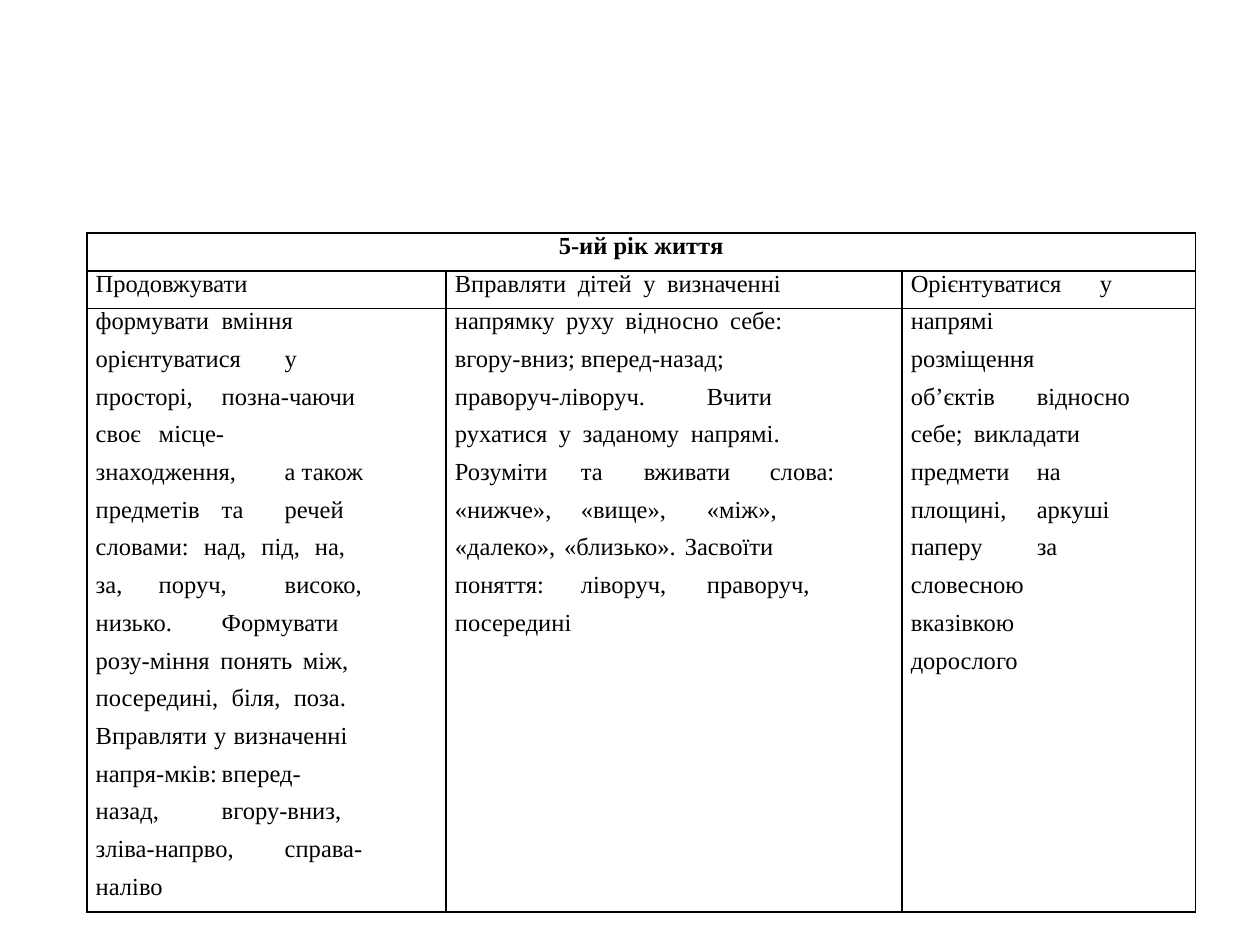
from dataclasses import dataclass
from lxml.etree import SubElement
from pptx import Presentation
from pptx.dml.color import RGBColor
from pptx.enum.text import PP_ALIGN
from pptx.oxml.ns import qn
from pptx.util import Cm, Pt


@dataclass
class Theme:
    ink: str = "000000"
    face: str = "Times New Roman"
    size: float = 14
    lead: float = 15.1
    rule: float = 1


theme = Theme()
title = "5-ий рік життя"
widths = [7.24, 9.19, 5.92]
count = 18
height = 0.76

# text, tab stops in cm, extra points in each word gap
goals = [
    ("Продовжувати", [], 0),
    ("формувати\tвміння", [3.86], 0),
    ("орієнтуватися\tу", [5.05], 0),
    ("просторі,\tпозна-чаючи", [2.59], 0),
    ("своє\tмісце-", [3.99], 0),
    ("знаходження,\tа також", [3.56], 0),
    ("предметів\tта\tречей", [2.97, 4.09], 0),
    ("словами: над, під, на,", [], 5),
    ("за,\tпоруч,\tвисоко,", [1.55, 3.73], 0),
    ("низько.\tФормувати", [2.92], 0),
    ("розу-міння понять між,", [], 2.5),
    ("посередині, біля, поза.", [], 4),
    ("Вправляти у визначенні", [], 0.5),
    ("напря-мків:\tвперед-", [3.71], 0),
    ("назад,\tвгору-вниз,", [2.87], 0),
    ("зліва-напрво,\tсправа-", [3.73], 0),
    ("наліво", [], 0),
]
tasks = [
    ("Вправляти дітей у визначенні", [], 3),
    ("напрямку руху відносно себе:", [], 3),
    ("вгору-вниз;\tвперед-назад;", [3.91], 0),
    ("праворуч-ліворуч.\tВчити", [5.49], 0),
    ("рухатися у заданому напрямі.", [], 3),
    ("Розуміти\tта\tвживати\tслова:", [2.49, 3.33, 5.51], 0),
    ("«нижче»,\t«вище»,\t«між»,", [2.92, 5.38], 0),
    ("«далеко», «близько». Засвоїти", [], 1.5),
    ("поняття:\tліворуч,\tправоруч,", [2.49, 4.72], 0),
    ("посередині", [], 0),
]
skills = [
    ("Орієнтуватися\tу", [4.06], 0),
    ("напрямі", [], 0),
    ("розміщення", [], 0),
    ("об’єктів\tвідносно", [2.44], 0),
    ("себе;\tвикладати", [2.16], 0),
    ("предмети\tна", [3.81], 0),
    ("площині,\tаркуші", [2.82], 0),
    ("паперу\tза", [3.89], 0),
    ("словесною", [], 0),
    ("вказівкою", [], 0),
    ("дорослого", [], 0),
]


def write(par, text, bold=False, gap=0):
    run = par.add_run()
    run.text = text
    font = run.font
    font.name = theme.face
    font.size = Pt(theme.size)
    font.bold = bold
    font.color.rgb = RGBColor.from_string(theme.ink)
    if gap:
        font._element.set("spc", str(int(gap * 100)))


def frame(cell, sides):
    props = cell._tc.get_or_add_tcPr()
    for side in sides:
        line = SubElement(props, qn(f"a:ln{side}"), w=str(Pt(theme.rule)))
        fill = SubElement(line, qn("a:solidFill"))
        SubElement(fill, qn("a:srgbClr"), val=theme.ink)
    cell.fill.background()
    cell.margin_left = cell.margin_right = 0
    cell.margin_top = cell.margin_bottom = 0


deck = Presentation()
deck.slide_width = Cm(25.4)
deck.slide_height = Cm(19.05)
slide = deck.slides.add_slide(deck.slide_layouts[6])

shape = slide.shapes.add_table(
    count, len(widths), Cm(1.75), Cm(4.7), Cm(sum(widths)), Cm(count * height)
)
table = shape.table
table.first_row = table.horz_banding = False
style = table._tbl.tblPr.find(qn("a:tableStyleId"))
style.text = "{2D5ABB26-0587-4C30-8999-92F81FD0307C}"
for col, width in zip(table.columns, widths):
    col.width = Cm(width)
for row in table.rows:
    row.height = Cm(height)

for top in range(count):
    sides = "LR" + "T" * (top < 2) + "B" * (top in (0, count - 1))
    for left in range(len(widths)):
        frame(table.cell(top, left), sides)

head = table.cell(0, 0)
head.merge(table.cell(0, len(widths) - 1))
par = head.text_frame.paragraphs[0]
par.alignment = PP_ALIGN.CENTER
par.line_spacing = Pt(theme.lead)
write(par, title, bold=True)

for left, lines in enumerate([goals, tasks, skills]):
    for top in range(1, count):
        par = table.cell(top, left).text_frame.paragraphs[0]
        if top > len(lines):
            SubElement(par._p, qn("a:endParaRPr"), sz=str(theme.size * 100))
            continue
        text, stops, gap = lines[top - 1]
        par.line_spacing = Pt(theme.lead)
        props = par._p.get_or_add_pPr()
        props.set("marL", str(Cm(0.18)))
        props.set("indent", "0")
        if stops:
            tabs = SubElement(props, qn("a:tabLst"))
            for stop in stops:
                SubElement(tabs, qn("a:tab"), pos=str(Cm(stop)), algn="l")
        words = text.split(" ") if gap else [text]
        for spot, word in enumerate(words):
            if spot:
                write(par, " ", gap=gap)
            write(par, word)

deck.save("out.pptx")
